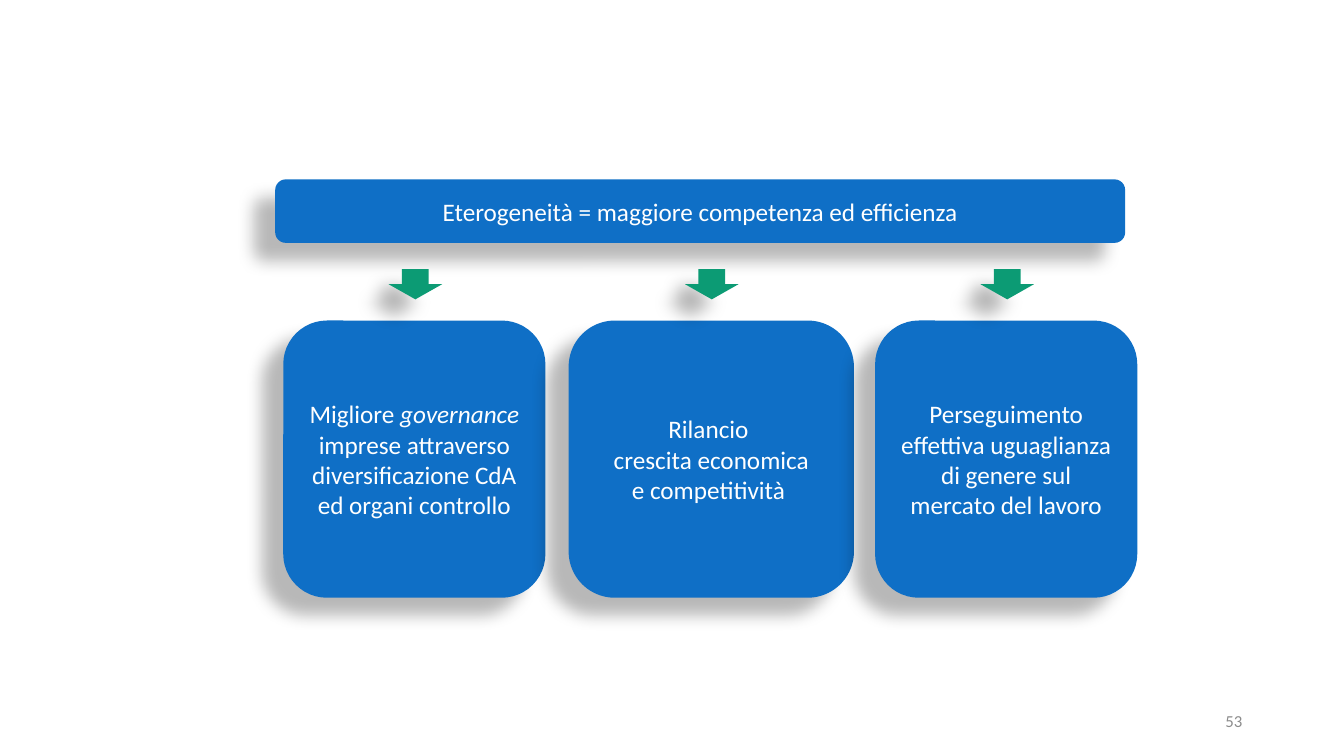
from lxml import etree
from pptx import Presentation
from pptx.dml.color import RGBColor
from pptx.enum import shapes, text
from pptx.oxml.ns import qn
from pptx.util import Inches, Pt

# Content: each box is a list of paragraphs, each a list of (text, italic) runs
THESIS = [[("Eterogeneità = maggiore competenza ed efficienza", False)]]
# left, width, centre of the arrow above, paragraphs
CARDS = [
    (2.81, 2.6, 4.12, [[
        ("Migliore ", False), ("governance", True),
        (" imprese attraverso diversificazione CdA ed organi controllo", False)]]),
    (5.64, 2.83, 7.06, [
        [("Rilancio ", False)], [("crescita economica", False)],
        [("e competitività ", False)]]),
    (8.68, 2.6, 9.99, [[
        ("Perseguimento effettiva uguaglianza di genere sul mercato del lavoro", False)]]),
]
NUMBER = [[("53", False)]]

COLORS = {"box": "0F6FC6", "arrow": "0C9B74", "text": "FFFFFF",
          "number": "8C8C8C", "shadow": "000000"}
CARD_TOP, CARD_HIGH = 3.18, 2.75
ARROW_TOP, ARROW_WIDE, ARROW_HIGH = 2.67, 0.53, 0.3
KIND = shapes.MSO_SHAPE


def color(name):
    return RGBColor.from_string(COLORS[name])


def write(shape, paras, size=18, tint="text", align=text.PP_ALIGN.CENTER):
    frame = shape.text_frame
    frame.word_wrap = True
    frame.vertical_anchor = text.MSO_ANCHOR.MIDDLE
    for i, runs in enumerate(paras):
        para = frame.add_paragraph() if i else frame.paragraphs[0]
        para.alignment = align
        for words, italic in runs:
            run = para.add_run()
            run.text = words
            font = run.font
            font.name, font.size, font.italic = "Calibri", Pt(size), italic
            font.color.rgb = color(tint)


def cast(shape):
    """Give the shape a soft shadow falling down and to the left."""
    shape.shadow.inherit = False
    effects = shape._element.spPr.find(qn("a:effectLst"))
    outer = etree.SubElement(
        effects, qn("a:outerShdw"), blurRad=str(Pt(11.8)), dist=str(Pt(19.7)),
        dir=str(141 * 60000), algn="ctr", rotWithShape="0")
    shade = etree.SubElement(outer, qn("a:srgbClr"), val=COLORS["shadow"])
    etree.SubElement(shade, qn("a:alpha"), val="28000")


def draw(slide, kind, left, top, wide, high, fill):
    shape = slide.shapes.add_shape(
        kind, Inches(left), Inches(top), Inches(wide), Inches(high))
    shape.fill.solid()
    shape.fill.fore_color.rgb = color(fill)
    shape.line.fill.background()
    cast(shape)
    return shape


def main():
    deck = Presentation()
    deck.slide_width, deck.slide_height = Inches(13.33), Inches(7.5)
    slide = deck.slides.add_slide(deck.slide_layouts[6])

    # Cards
    for left, wide, _, paras in CARDS:
        card = draw(slide, KIND.ROUNDED_RECTANGLE, left, CARD_TOP, wide, CARD_HIGH, "box")
        write(card, paras)

    # Thesis bar
    bar = draw(slide, KIND.ROUNDED_RECTANGLE, 2.73, 1.78, 8.43, 0.63, "box")
    write(bar, THESIS)

    # Arrows from the bar to the cards
    for _, _, mid, _ in CARDS:
        draw(slide, KIND.DOWN_ARROW, mid - ARROW_WIDE / 2, ARROW_TOP,
             ARROW_WIDE, ARROW_HIGH, "arrow")

    # Slide number
    box = slide.shapes.add_textbox(Inches(9.42), Inches(6.95), Inches(3), Inches(0.4))
    write(box, NUMBER, size=12, tint="number", align=text.PP_ALIGN.RIGHT)

    deck.save("out.pptx")


if __name__ == "__main__":
    main()
